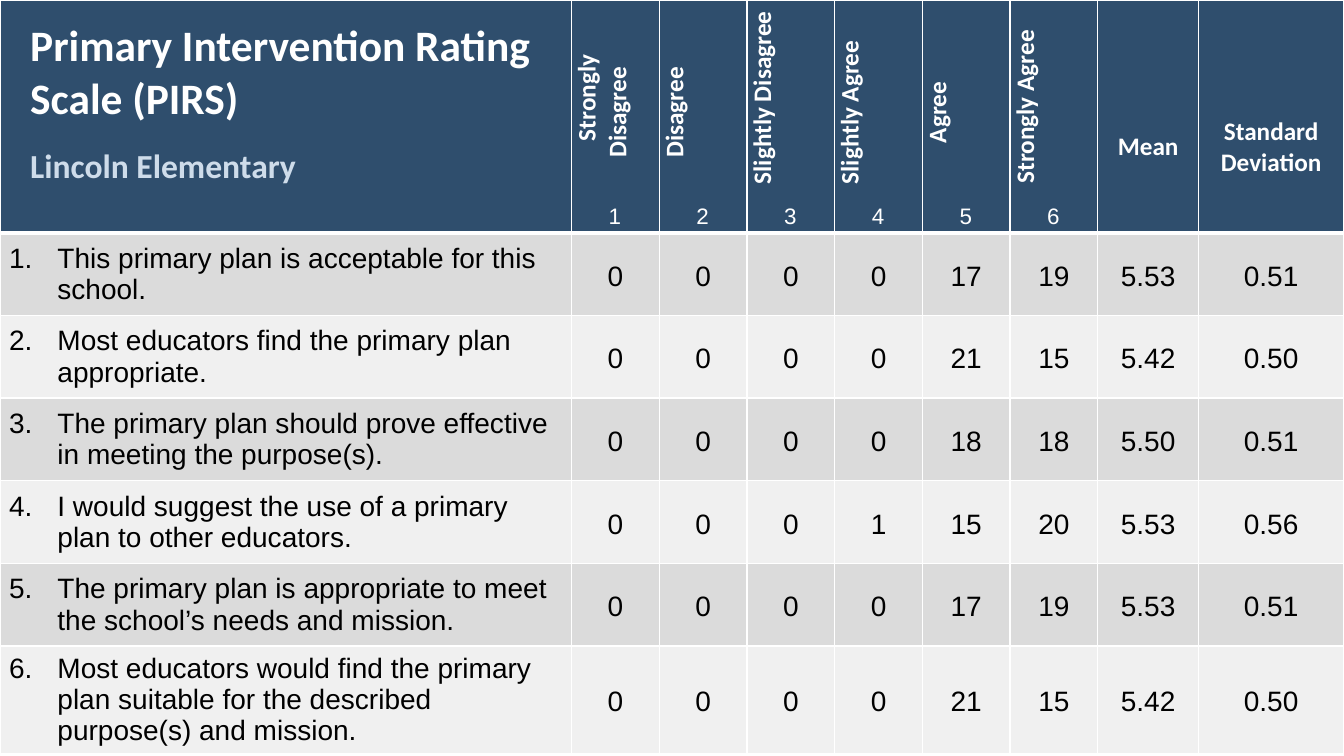
from lxml.etree import SubElement
from pptx import Presentation
from pptx.dml.color import RGBColor
from pptx.enum.text import MSO_ANCHOR, MSO_AUTO_SIZE, PP_ALIGN
from pptx.oxml.ns import qn
from pptx.util import Inches, Pt

NAVY = RGBColor(0x2F, 0x4E, 0x6D)
PALE_BLUE = RGBColor(0xCE, 0xDC, 0xEA)
WHITE = RGBColor(0xFF, 0xFF, 0xFF)
BLACK = RGBColor(0, 0, 0)
DARK_BAND = RGBColor(0xDB, 0xDB, 0xDB)
LIGHT_BAND = RGBColor(0xF0, 0xF0, 0xF0)

TITLE_FONT = {"name": "Calibri", "size": Pt(31), "bold": True, "color": WHITE}
SCHOOL_FONT = {**TITLE_FONT, "size": Pt(24), "color": PALE_BLUE}
HEADING_FONT = {**TITLE_FONT, "size": Pt(18)}
BODY_FONT = {"name": "Arial", "size": Pt(20), "bold": False, "color": BLACK}
SCALE_FONT = {**BODY_FONT, "size": Pt(16), "color": WHITE}

CENTERED = {"alignment": PP_ALIGN.CENTER}
SCORE_FORMAT = {**CENTERED, "line_spacing": 1.15}
CELL_FORMAT = {
    "vertical_anchor": MSO_ANCHOR.MIDDLE,
    "margin_left": Inches(0.07),
    "margin_top": Inches(0),
    "margin_right": Inches(0.07),
    "margin_bottom": Inches(0),
}
TITLE_CELL = {
    "vertical_anchor": MSO_ANCHOR.TOP,
    "margin_left": Inches(0.3),
    "margin_top": Inches(0.2),
    "margin_right": Inches(0.1),
    "margin_bottom": Inches(0.05),
}
STATISTIC_CELL = {**CELL_FORMAT, "margin_top": Inches(0.61)}

SCALE_WIDTH = 0.87
COLUMN_WIDTHS = [5.67] + [SCALE_WIDTH] * 6 + [1, 1.44]
ROW_HEIGHTS = [2.31] + [0.82] * 5 + [1.07]

RATINGS = [
    ("Strongly Disagree", 0.29),
    ("Disagree", 0),
    ("Slightly Disagree", 0.29),
    ("Slightly Agree", 0),
    ("Agree", 0),
    ("Strongly Agree", 0.11),
]
STATISTICS = ["Mean", "Standard Deviation"]
ITEMS = [
    ("This primary plan is acceptable for this school.", "0 0 0 0 17 19 5.53 0.51"),
    ("Most educators find the primary plan appropriate.", "0 0 0 0 21 15 5.42 0.50"),
    ("The primary plan should prove effective in meeting the purpose(s).", "0 0 0 0 18 18 5.50 0.51"),
    ("I would suggest the use of a primary plan to other educators.", "0 0 0 1 15 20 5.53 0.56"),
    ("The primary plan is appropriate to meet the school’s needs and mission.", "0 0 0 0 17 19 5.53 0.51"),
    ("Most educators would find the primary plan suitable for the described purpose(s) and mission.",
     "0 0 0 0 21 15 5.42 0.50"),
]


def set_attributes(target, values):
    for name, value in values.items():
        setattr(target, name, value)


def write_paragraph(paragraph, text, font, paragraph_format):
    set_attributes(paragraph, paragraph_format)
    run = paragraph.add_run()
    run.text = text
    set_attributes(run.font, {name: value for name, value in font.items() if name != "color"})
    run.font.color.rgb = font["color"]


def set_indent(paragraph, left, first_line):
    properties = paragraph._p.get_or_add_pPr()
    properties.set("marL", str(Inches(left)))
    properties.set("indent", str(Inches(first_line)))


def add_tab_stops(paragraph, positions, alignment):
    stops = SubElement(paragraph._p.get_or_add_pPr(), qn("a:tabLst"))
    for position in positions:
        SubElement(stops, qn("a:tab"), pos=str(Inches(position)), algn=alignment)


def add_borders(cell, widths):
    properties = cell._tc.get_or_add_tcPr()
    for side, width in widths.items():
        line = SubElement(properties, qn(f"a:ln{side}"), w=str(Pt(width)))
        fill = SubElement(line, qn("a:solidFill"))
        SubElement(fill, qn("a:srgbClr"), val=str(WHITE))


def format_cell(cell, color, borders, cell_format=CELL_FORMAT):
    set_attributes(cell, cell_format)
    add_borders(cell, borders)
    cell.fill.solid()
    cell.fill.fore_color.rgb = color
    return cell.text_frame.paragraphs[0]


def fill_header(table):
    borders = {"L": 1, "R": 1, "T": 1, "B": 3}
    title_cell = table.cell(0, 0)
    title = format_cell(title_cell, NAVY, borders, TITLE_CELL)
    write_paragraph(title, "Primary Intervention Rating Scale (PIRS)", TITLE_FONT, {})
    school = title_cell.text_frame.add_paragraph()
    write_paragraph(school, "Lincoln Elementary", SCHOOL_FONT, {"space_before": Pt(14.5)})

    for column, (rating, first_line) in enumerate(RATINGS, start=1):
        cell = table.cell(0, column)
        paragraph = format_cell(cell, NAVY, borders)
        cell._tc.get_or_add_tcPr().set("vert", "vert270")
        set_indent(paragraph, 0.08, first_line)
        write_paragraph(paragraph, rating, HEADING_FONT, CENTERED)

    for column, statistic in enumerate(STATISTICS, start=len(RATINGS) + 1):
        paragraph = format_cell(table.cell(0, column), NAVY, borders, STATISTIC_CELL)
        write_paragraph(paragraph, statistic, HEADING_FONT, CENTERED)


def fill_item(table, row, statement, scores):
    color = DARK_BAND if row % 2 else LIGHT_BAND
    borders = {"L": 1, "R": 1, "T": 3 if row == 1 else 1, "B": 1}
    paragraph = format_cell(table.cell(row, 0), color, borders)
    set_indent(paragraph, 0.5, -0.48)
    write_paragraph(paragraph, f"{row}.\t{statement}", BODY_FONT, {})
    for column, score in enumerate(scores.split(), start=1):
        paragraph = format_cell(table.cell(row, column), color, borders)
        write_paragraph(paragraph, score, BODY_FONT, SCORE_FORMAT)


def add_rating_table(slide):
    table = slide.shapes.add_table(
        len(ROW_HEIGHTS), len(COLUMN_WIDTHS), Inches(0), Inches(0), Inches(13.33), Inches(7.47)
    ).table
    for column, width in zip(table.columns, COLUMN_WIDTHS):
        column.width = Inches(width)
    for row, height in zip(table.rows, ROW_HEIGHTS):
        row.height = Inches(height)
    fill_header(table)
    for row, (statement, scores) in enumerate(ITEMS, start=1):
        fill_item(table, row, statement, scores)


def add_scale_numbers(slide):
    shape = slide.shapes.add_textbox(Inches(5.75), Inches(1.96), Inches(5.17), Inches(0.37))
    set_attributes(shape.text_frame, {"word_wrap": True, "auto_size": MSO_AUTO_SIZE.SHAPE_TO_FIT_TEXT})
    paragraph = shape.text_frame.paragraphs[0]
    count = len(RATINGS)
    add_tab_stops(paragraph, [0.25 + SCALE_WIDTH * index for index in range(count)], "ctr")
    numbers = "".join(f"\t{number}" for number in range(1, count + 1))
    write_paragraph(paragraph, numbers, SCALE_FONT, {})


def main():
    presentation = Presentation()
    set_attributes(presentation, {"slide_width": Inches(13.33), "slide_height": Inches(7.5)})
    slide = presentation.slides.add_slide(presentation.slide_layouts[6])
    add_rating_table(slide)
    add_scale_numbers(slide)
    presentation.save("out.pptx")


if __name__ == "__main__":
    main()
